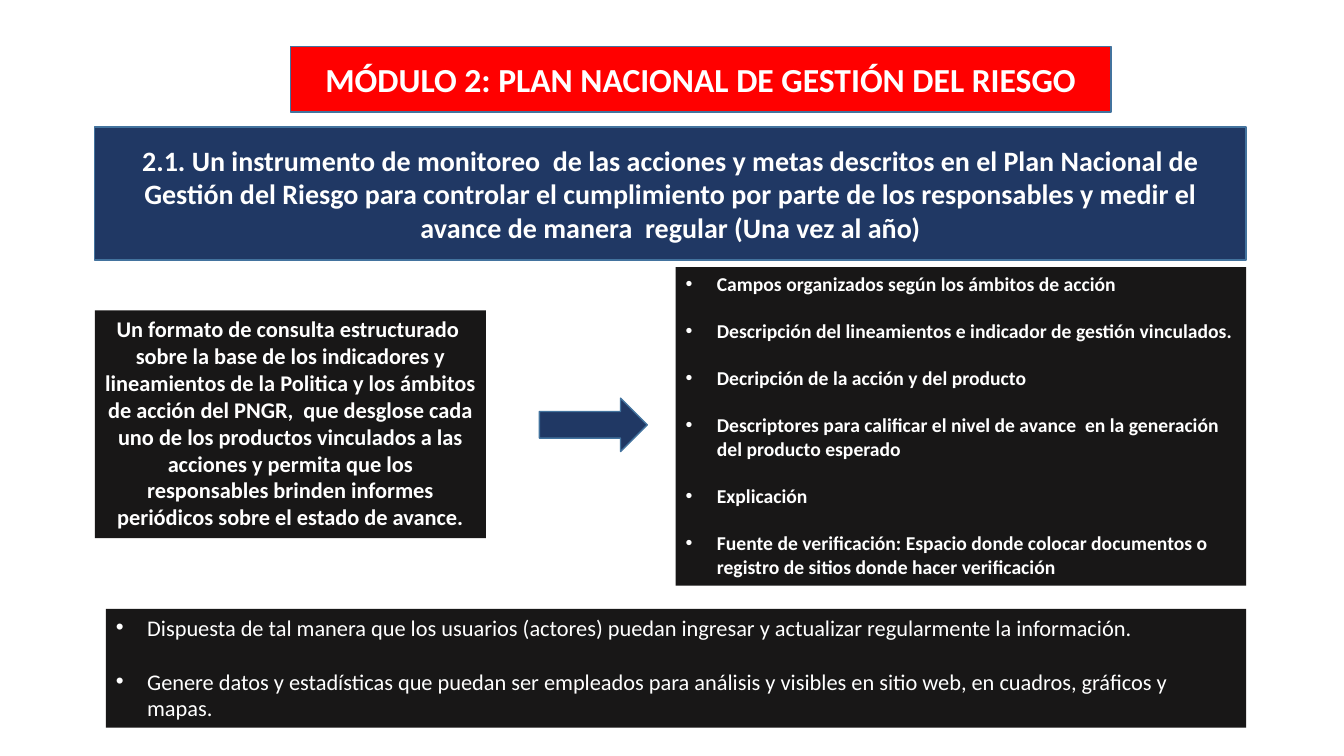
"""Build the slide on the monitoring instrument of the national risk plan."""
from lxml import etree
from pptx import Presentation
from pptx.dml.color import RGBColor
from pptx.enum.shapes import MSO_SHAPE
from pptx.enum.text import MSO_ANCHOR, MSO_AUTO_SIZE, PP_ALIGN
from pptx.oxml.ns import qn
from pptx.util import Inches, Pt

RECTANGLE, RIGHT_ARROW = MSO_SHAPE.RECTANGLE, MSO_SHAPE.RIGHT_ARROW
TOP, MIDDLE = MSO_ANCHOR.TOP, MSO_ANCHOR.MIDDLE
LEFT, CENTER = PP_ALIGN.LEFT, PP_ALIGN.CENTER
FIXED = MSO_AUTO_SIZE.NONE

TITLE = "MÓDULO 2: PLAN NACIONAL DE GESTIÓN DEL RIESGO"
PURPOSE = (
    "2.1. Un instrumento de monitoreo  de las acciones y metas descritos en el Plan "
    "Nacional de Gestión del Riesgo para controlar el cumplimiento por parte de los "
    "responsables y medir el avance de manera  regular (Una vez al año)"
)
QUERY_FORMAT = (
    "Un formato de consulta estructurado  sobre la base de los indicadores y "
    "lineamientos de la Politica y los ámbitos de acción del PNGR,  que desglose cada "
    "uno de los productos vinculados a las acciones y permita que los responsables "
    "brinden informes periódicos sobre el estado de avance."
)
FIELDS = [
    "Campos organizados según los ámbitos de acción",
    "Descripción del lineamientos e indicador de gestión vinculados.",
    "Decripción de la acción y del producto",
    "Descriptores para calificar el nivel de avance  en la generación del producto esperado",
    "Explicación",
    "Fuente de verificación: Espacio donde colocar documentos o registro de sitios "
    "donde hacer verificación",
]
REQUIREMENTS = [
    "Dispuesta de tal manera que los usuarios (actores) puedan ingresar y actualizar "
    "regularmente la información.",
    "Genere datos y estadísticas que puedan ser empleados para análisis y visibles en "
    "sitio web, en cuadros, gráficos y mapas.",
]

COLORS = {"red": "FF0000", "navy": "203864", "black": "181717",
          "border": "43739E", "text": "FFFFFF"}
FONT = "Calibri"
SLIDE_WIDTH, SLIDE_HEIGHT = 13.33, 7.5
LEFT_EDGE, RIGHT_EDGE = 0.94, 12.36
FIELDS_LEFT, REQUIREMENTS_LEFT = 6.7, 1.05
BULLET_INDENT = 0.31
LINE_HEIGHT = 1.2


def color(name):
    return RGBColor.from_string(COLORS[name])


def place(shape, left, top, width, height):
    shape.left, shape.top = Inches(left), Inches(top)
    shape.width, shape.height = Inches(width), Inches(height)


def paint(shape, fill, bordered):
    shape.fill.solid()
    shape.fill.fore_color.rgb = color(fill)
    if bordered:
        shape.line.color.rgb = color("border")
        shape.line.width = Pt(1)
    else:
        shape.line.fill.background()


def add_bullet(paragraph):
    properties = paragraph._p.get_or_add_pPr()
    properties.set("marL", str(Inches(BULLET_INDENT)))
    properties.set("indent", str(-Inches(BULLET_INDENT)))
    etree.SubElement(properties, qn("a:buFont")).set("typeface", "Arial")
    etree.SubElement(properties, qn("a:buChar")).set("char", "•")


def write(shape, texts, size, bold=True, bulleted=False, anchor=TOP):
    frame = shape.text_frame
    frame.word_wrap = True
    frame.auto_size = FIXED
    frame.vertical_anchor = anchor
    for index, text in enumerate(texts):
        paragraph = frame.add_paragraph() if index else frame.paragraphs[0]
        paragraph.alignment = LEFT if bulleted else CENTER
        paragraph.space_before = Pt(round(size * LINE_HEIGHT, 1) if index else 0)
        if bulleted:
            add_bullet(paragraph)
        run = paragraph.add_run()
        run.text = text
        run.font.name = FONT
        run.font.size = Pt(size)
        run.font.bold = bold
        run.font.color.rgb = color("text")


def add_shape(slide, kind, box, fill, bordered):
    shape = slide.shapes.add_shape(kind, *(Inches(length) for length in box))
    shape.shadow.inherit = False
    paint(shape, fill, bordered)
    return shape


def main():
    presentation = Presentation()
    presentation.slide_width = Inches(SLIDE_WIDTH)
    presentation.slide_height = Inches(SLIDE_HEIGHT)
    two_content_layout = presentation.slide_layouts[3]
    slide = presentation.slides.add_slide(two_content_layout)
    title, fields, requirements = list(slide.placeholders)[:3]

    place(title, 2.88, 0.46, 8.14, 0.65)
    paint(title, "red", True)
    write(title, [TITLE], 24, anchor=MIDDLE)

    purpose = add_shape(slide, RECTANGLE, (LEFT_EDGE, 1.26, RIGHT_EDGE - LEFT_EDGE, 1.32),
                        "navy", True)
    write(purpose, [PURPOSE], 20, anchor=MIDDLE)

    query_format = add_shape(slide, RECTANGLE, (LEFT_EDGE, 3.08, 3.88, 2.26), "black", False)
    write(query_format, [QUERY_FORMAT], 16)

    place(fields, FIELDS_LEFT, 2.65, RIGHT_EDGE - FIELDS_LEFT, 3.16)
    paint(fields, "black", False)
    write(fields, FIELDS, 14, bulleted=True)

    add_shape(slide, RIGHT_ARROW, (5.35, 3.95, 1.07, 0.53), "navy", True)

    place(requirements, REQUIREMENTS_LEFT, 6.04, RIGHT_EDGE - REQUIREMENTS_LEFT, 1.18)
    paint(requirements, "black", False)
    write(requirements, REQUIREMENTS, 16, bold=False, bulleted=True)

    presentation.save("out.pptx")


if __name__ == "__main__":
    main()
